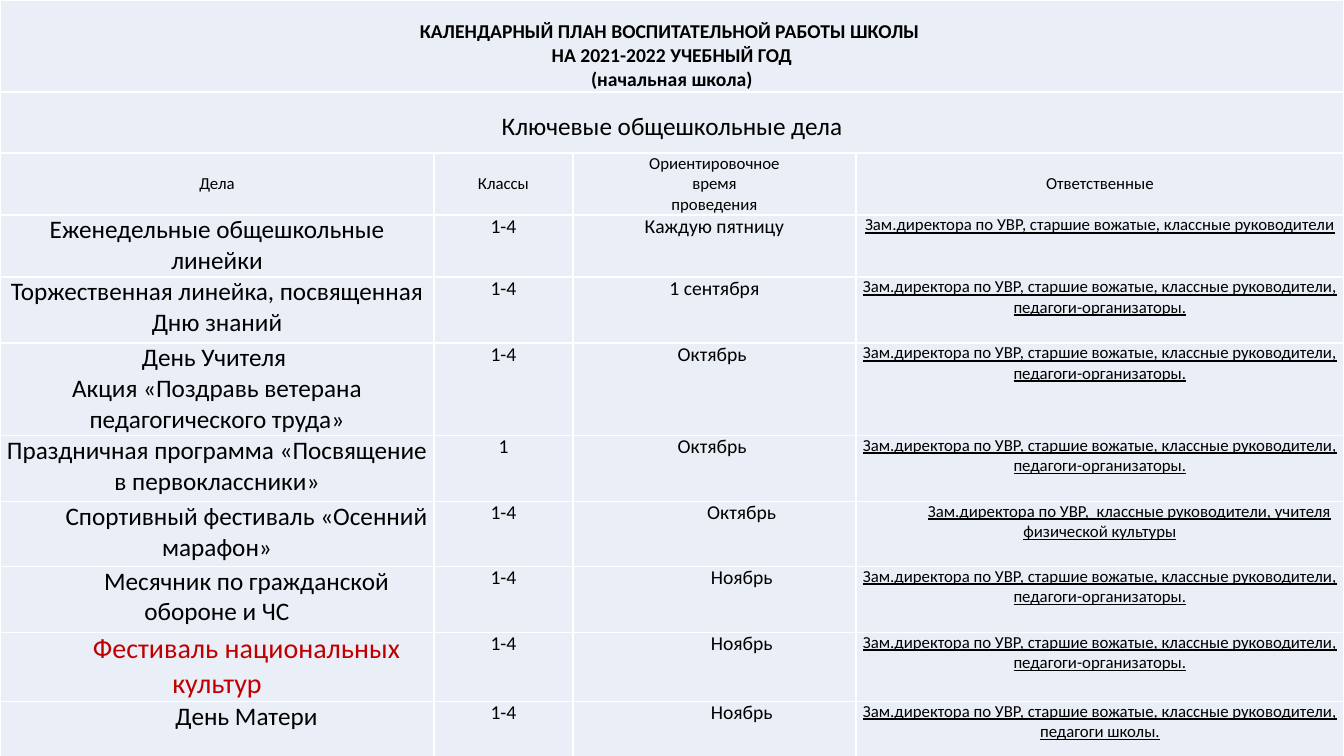
from lxml import etree
from pptx import Presentation
from pptx import util as u
from pptx.dml.color import RGBColor
from pptx.enum import text
from pptx.oxml import ns

PX = 914400 / 100.8
PALE = RGBColor(0xEA, 0xEF, 0xF7)
BLACK = RGBColor(0, 0, 0)
RED = RGBColor(0xC0, 0, 0)
WHITE = RGBColor(0xFF, 0xFF, 0xFF)

COLS = [434, 139, 283, 488]
ROWS = [92, 61, 62, 62, 66, 92, 66, 65, 66, 69, 65]
INDENT = 59

TITLE = """КАЛЕНДАРНЫЙ ПЛАН ВОСПИТАТЕЛЬНОЙ РАБОТЫ ШКОЛЫ 
НА 2021-2022 УЧЕБНЫЙ ГОД
(начальная школа)"""
HEADS = ["Дела", "Классы", "Ориентировочное\nвремя\nпроведения", "Ответственные"]
TEAM = "Зам.директора по УВР, старшие вожатые, классные руководители"
STAFF = TEAM + ", педагоги-организаторы."
SPORT = "Зам.директора по УВР,  классные руководители, учителя физической культуры"
FEST = "Фестиваль национальных культур"

# Event, classes, time, people in charge, columns with a first-line indent
EVENTS = [
    ("Еженедельные общешкольные линейки", "1-4", "Каждую пятницу", TEAM, ()),
    ("Торжественная линейка, посвященная Дню знаний", "1-4", "1 сентября", STAFF, ()),
    ("День Учителя \nАкция «Поздравь ветерана педагогического труда»",
     "1-4", "Октябрь ", STAFF, ()),
    ("Праздничная программа «Посвящение в первоклассники»",
     "1", "Октябрь ", STAFF, ()),
    ("Спортивный фестиваль «Осенний марафон»", "1-4", "Октябрь ", SPORT, (0, 2, 3)),
    ("Месячник по гражданской обороне и ЧС", "1-4", "Ноябрь ", STAFF, (0, 2)),
    (FEST, "1-4", "Ноябрь ", STAFF, (0, 2)),
    ("День Матери", "1-4", "Ноябрь ", TEAM + ", педагоги школы.", (0, 2)),
]
SIZES = [18, 14, 14, 12]


def px(n):
    return u.Emu(round(n * PX))


class Deck:
    def __init__(self, wide, high, font):
        self.prs = Presentation()
        self.prs.slide_width, self.prs.slide_height = px(wide), px(high)
        self.slide = self.prs.slides.add_slide(self.prs.slide_layouts[6])
        self.font = font

    def grid(self, cols, rows):
        """Add a plain table with filled and bordered cells."""
        table = self.slide.shapes.add_table(
            len(rows), len(cols), 0, 0, px(sum(cols)), px(sum(rows))).table
        table.first_row = table.horz_banding = False
        for col, wide in zip(table.columns, cols):
            col.width = px(wide)
        for row, high in zip(table.rows, rows):
            row.height = px(high)
            for cell in row.cells:
                cell.margin_left = cell.margin_right = px(4)
                cell.margin_top = cell.margin_bottom = 0
                cell.fill.solid()
                cell.fill.fore_color.rgb = PALE
                self.edge(cell)
        return table

    def edge(self, cell):
        """Draw a white line on all four sides of a cell."""
        props = cell._tc.get_or_add_tcPr()
        for spot, side in enumerate("LRTB"):
            line = etree.Element(ns.qn("a:ln" + side), w=str(u.Pt(1)))
            fill = etree.SubElement(line, ns.qn("a:solidFill"))
            etree.SubElement(fill, ns.qn("a:srgbClr"), val=str(WHITE))
            props.insert(spot, line)

    def label(self, cell, words, size, bold=False, line=False, color=BLACK, indent=0):
        """Set and format the text of a cell."""
        cell.text_frame.text = words
        for par in cell.text_frame.paragraphs:
            par.alignment = text.PP_ALIGN.CENTER
            if indent:
                props = par._p.get_or_add_pPr()
                props.set("marL", "0")
                props.set("indent", str(px(indent)))
            for run in par.runs:
                font = run.font
                font.name, font.size = self.font, u.Pt(size)
                font.bold, font.underline = bold, line
                font.color.rgb = color


def main():
    deck = Deck(1344, 756, "Calibri")
    plan = deck.grid(COLS, ROWS)

    for row in range(2):
        plan.cell(row, 0).merge(plan.cell(row, 3))
        plan.cell(row, 0).margin_top = px(20)
    deck.label(plan.cell(0, 0), TITLE, 14, bold=True)
    deck.label(plan.cell(1, 0), "Ключевые общешкольные дела", 18)

    for col, head in enumerate(HEADS):
        cell = plan.cell(2, col)
        cell.vertical_anchor = text.MSO_ANCHOR.MIDDLE
        deck.label(cell, head, 12)

    for row, (*words, shifted) in enumerate(EVENTS, 3):
        for col, (word, size) in enumerate(zip(words, SIZES)):
            fest = word == FEST
            deck.label(plan.cell(row, col), word, 20 if fest else size,
                       line=col == 3, color=RED if fest else BLACK,
                       indent=INDENT if col in shifted else 0)
    deck.prs.save("out.pptx")


if __name__ == "__main__":
    main()
